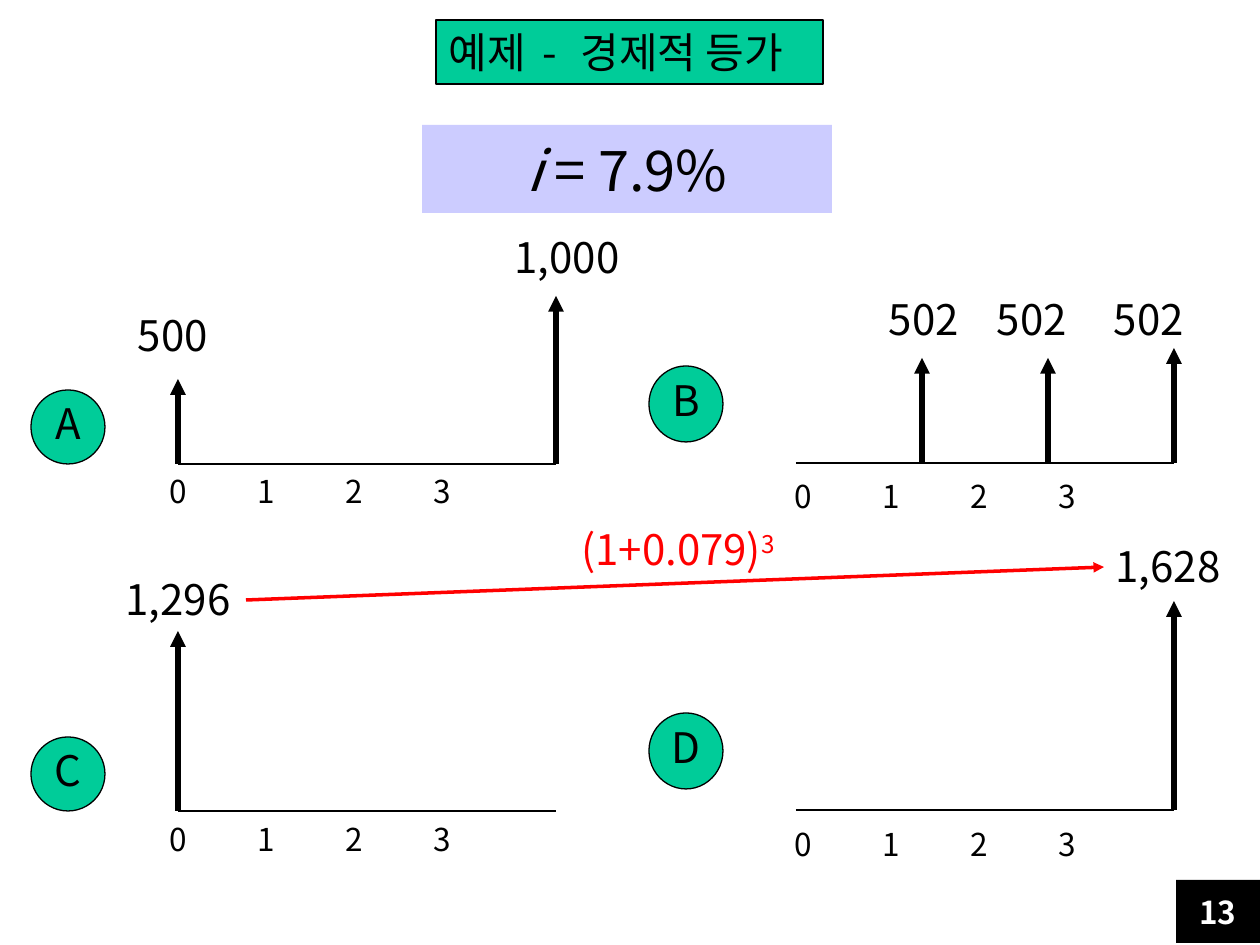
from dataclasses import dataclass

from pptx import Presentation, util as u
from pptx.dml.color import RGBColor
from pptx.enum import shapes, text
from pptx.oxml import ns, xmlchemy as xml

SCALE = u.Inches(1) / 126


@dataclass(frozen=True)
class Theme:
    """Colours, font and type sizes of the slide."""
    font: str = "Noto Sans CJK KR"
    ink: str = "000000"
    paper: str = "FFFFFF"
    green: str = "00CC99"
    lilac: str = "CCCCFF"
    red: str = "FF0000"
    rate: int = 32
    body: int = 24
    small: int = 18


def px(length):
    return u.Emu(round(length * SCALE))


class CashFlowSlide:
    def __init__(self, slide, theme):
        self.slide, self.theme = slide, theme

    def set_text(self, frame, runs, size, colour, margins=(0, 0, 0, 0), anchor="MIDDLE", wrap=True):
        left, top, right, bottom = margins
        layout = {
            "margin_left": px(left), "margin_top": px(top),
            "margin_right": px(right), "margin_bottom": px(bottom),
            "vertical_anchor": text.MSO_ANCHOR[anchor], "word_wrap": wrap,
        }
        for name, value in layout.items():
            setattr(frame, name, value)
        paragraph = frame.paragraphs[0]
        paragraph.alignment = text.PP_ALIGN.CENTER
        for words, changes, attributes in runs:
            run = paragraph.add_run()
            run.text = words
            style = {"name": self.theme.font, "size": u.Pt(size), **changes}
            for name, value in style.items():
                setattr(run.font, name, value)
            run.font.color.rgb = RGBColor.from_string(colour)
            properties = run._r.get_or_add_rPr()
            east_asian = xml.OxmlElement("a:ea")
            east_asian.set("typeface", self.theme.font)
            properties.append(east_asian)
            for name, value in attributes.items():
                properties.set(name, value)
        return paragraph

    def panel(self, kind, box, fill, runs, size, colour=None, outlined=False, **layout):
        shape = self.slide.shapes.add_shape(kind, *map(px, box))
        shape.shadow.inherit = False
        shape.fill.solid()
        shape.fill.fore_color.rgb = RGBColor.from_string(fill)
        if outlined:
            shape.line.color.rgb = RGBColor.from_string(self.theme.ink)
            shape.line.width = u.Pt(0.75)
        else:
            shape.line.fill.background()
        return self.set_text(shape.text_frame, runs, size, colour or self.theme.ink, **layout)

    def label(self, centre, top, runs, size, colour=None, width=140):
        box = (centre - width / 2, top, width, 63)
        frame = self.slide.shapes.add_textbox(*map(px, box)).text_frame
        self.set_text(frame, runs, size, colour or self.theme.ink, (0, 6, 0, 6), "TOP")

    def line(self, start, end, width, colour=None, arrow=False):
        line = self.slide.shapes.add_connector(
            shapes.MSO_CONNECTOR.STRAIGHT, *map(px, (*start, *end)))
        line.line.color.rgb = RGBColor.from_string(colour or self.theme.ink)
        line.line.width = u.Pt(width)
        if arrow:
            tail = xml.OxmlElement("a:tailEnd")
            tail.set("type", "triangle")
            line._element.spPr.find(ns.qn("a:ln")).append(tail)
        line._element.spPr.append(xml.OxmlElement("a:effectLst"))

    def diagram(self, letter, badge, origin, ticks, flows):
        theme, (x, base) = self.theme, origin
        self.panel(shapes.MSO_SHAPE.OVAL, badge, theme.green, [plain(letter)],
                   theme.body, outlined=True, margins=(0, 0, 0, 8), wrap=False)
        self.line(origin, (x + 378, base), 0.75)
        for offset, tip, amount, centre, top in flows:
            self.line((x + offset, base), (x + offset, tip), 3, arrow=True)
            self.label(centre, top, [plain(amount)], theme.body)
        first, top = ticks
        for period in range(4):
            self.label(first + 88 * period, top, [plain(str(period))], theme.small, width=50)


def plain(words):
    return words, {}, {}


def main():
    """Build the economic equivalence slide."""
    deck = Presentation()
    deck.slide_width, deck.slide_height = px(1260), px(945)
    theme = Theme()
    page = CashFlowSlide(deck.slides.add_slide(deck.slide_layouts[6]), theme)
    rect = shapes.MSO_SHAPE.RECTANGLE

    page.panel(rect, (422, 125, 410, 88), theme.lilac,
               [("i", {"italic": True}, {}), plain(" = 7.9%")], theme.rate)
    heading = page.panel(rect, (436, 20, 387, 64), theme.green,
                         [plain("예제"), (" - ", {}, {"spc": "400"}), plain("경제적 등가")],
                         theme.body, outlined=True, margins=(13, 0, 0, 0), wrap=False)
    heading.alignment = text.PP_ALIGN.LEFT

    diagrams = [
        ("A", (31, 390, 74, 74), (178, 464), (178, 466),
         [(0, 379, "500", 173, 304), (378, 296, "1,000", 567, 226)]),
        ("B", (649, 366, 74, 76), (796, 463), (803, 471),
         [(126, 358, "502", 924, 288), (252, 358, "502", 1032, 288),
          (378, 348, "502", 1149, 288)]),
        ("C", (31, 737, 74, 74), (178, 811), (178, 814),
         [(0, 631, "1,296", 178, 568)]),
        ("D", (649, 713, 74, 76), (796, 810), (803, 819),
         [(378, 601, "1,628", 1168, 535)]),
    ]
    for diagram in diagrams:
        page.diagram(*diagram)

    page.line((246, 600), (1104, 567), 2, theme.red, arrow=True)
    page.label(678, 518, [plain("(1+0.079)"), ("3", {}, {"baseline": "30000"})],
               theme.body, theme.red, width=224)
    page.panel(rect, (1176, 880, 84, 63), theme.ink,
               [("13", {"bold": True}, {})], theme.small, theme.paper)
    deck.save("out.pptx")


if __name__ == "__main__":
    main()
